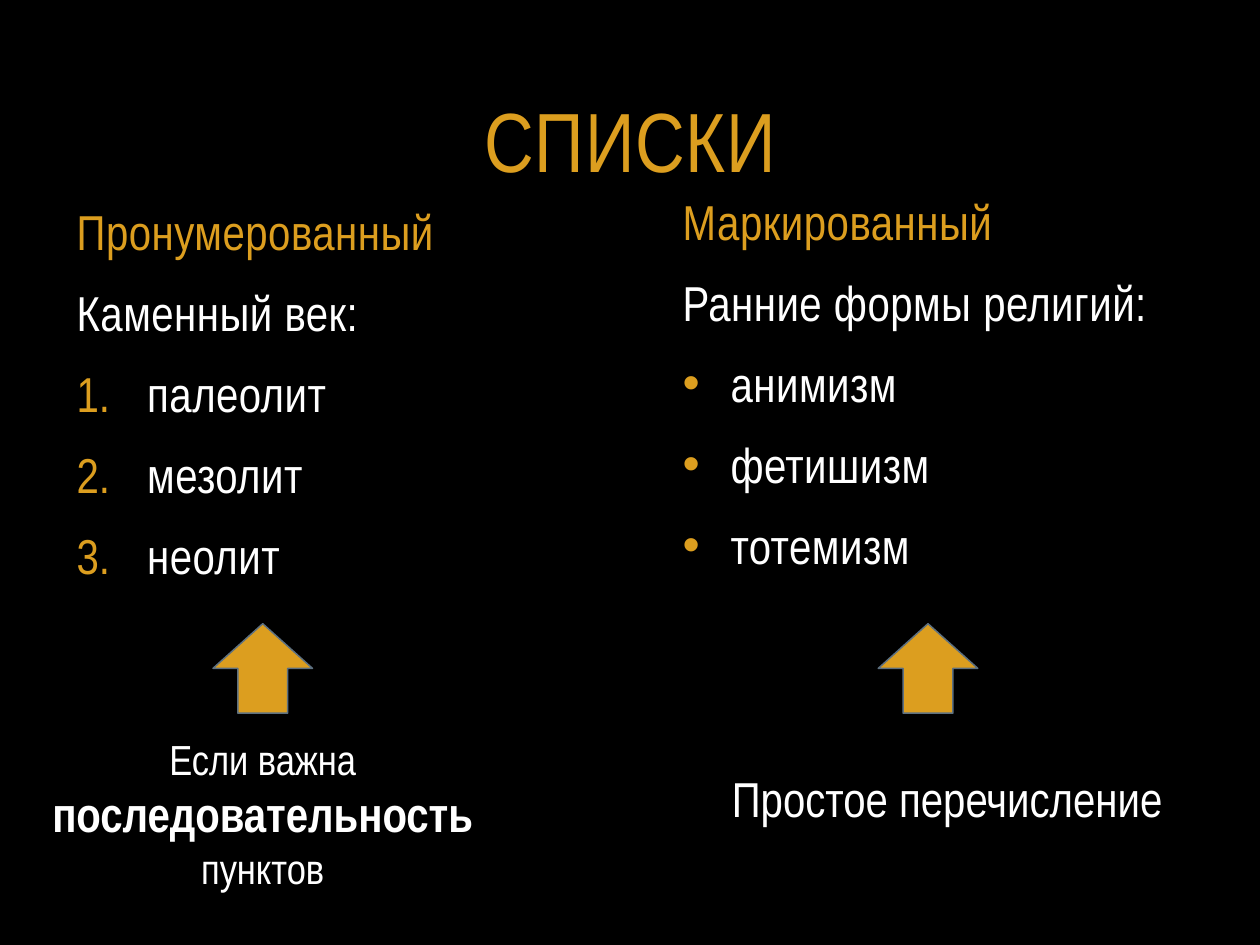
"""Build a slide that contrasts numbered and bulleted lists."""
from dataclasses import dataclass
from typing import Optional

import lxml.etree
import pptx
import pptx.dml.color
import pptx.enum.shapes
import pptx.enum.text
import pptx.oxml
import pptx.oxml.ns
import pptx.presentation
import pptx.slide
import pptx.text.text
import pptx.util
from pptx.util import Inches

GOLD, WHITE, BLACK, SLATE = "DC9E1F", "FFFFFF", "000000", "5D7080"
FONT = "Arial Narrow"
CENTER = pptx.enum.text.PP_ALIGN.CENTER


@dataclass(frozen=True)
class ListColumn:
    left: float
    top: float
    height: float
    heading: str
    lead: str
    items: tuple[str, ...]
    indent: float
    bullet_tag: str
    bullet_attributes: dict[str, str]
    arrow_left: float


COLUMNS = (
    ListColumn(0.51, 1.55, 4.5, "Пронумерованный", "Каменный век:",
               ("палеолит", "мезолит", "неолит"), 0.56,
               "a:buAutoNum", {"type": "arabicPeriod"}, 1.69),
    ListColumn(5.32, 1.47, 3.26, "Маркированный", "Ранние формы религий:",
               ("анимизм", "фетишизм", "тотемизм"), 0.38,
               "a:buChar", {"char": "•"}, 6.97),
)


def color(value: str) -> pptx.dml.color.RGBColor:
    return pptx.dml.color.RGBColor.from_string(value)


def add_box(slide: pptx.slide.Slide, left: float, top: float, width: float,
            height: float, wrap: bool = True, grow: bool = False) -> pptx.text.text.TextFrame:
    frame = slide.shapes.add_textbox(
        Inches(left), Inches(top), Inches(width), Inches(height)).text_frame
    frame.word_wrap = wrap
    if grow:
        frame.auto_size = pptx.enum.text.MSO_AUTO_SIZE.SHAPE_TO_FIT_TEXT
    return frame


def style(paragraph, fill: str, size: Optional[int] = None, spacing: float = 0) -> None:
    paragraph.font.name = FONT
    paragraph.font.color.rgb = color(fill)
    if size:
        paragraph.font.size = pptx.util.Pt(size)
    if spacing:
        for run in paragraph.runs:
            run._r.get_or_add_rPr().set("spc", str(round(spacing * 100)))


def add_bullet(paragraph, column: ListColumn) -> None:
    properties = paragraph._p.get_or_add_pPr()
    properties.set("marL", str(Inches(column.indent)))
    properties.set("indent", str(-Inches(column.indent)))
    qn = pptx.oxml.ns.qn
    bullet_color = lxml.etree.SubElement(properties, qn("a:buClr"))
    lxml.etree.SubElement(bullet_color, qn("a:srgbClr"), val=GOLD)
    lxml.etree.SubElement(properties, qn("a:buFont"), typeface=FONT if
                          column.bullet_tag == "a:buAutoNum" else "Arial")
    lxml.etree.SubElement(properties, qn(column.bullet_tag), column.bullet_attributes)


def add_list(slide: pptx.slide.Slide, column: ListColumn) -> None:
    frame = add_box(slide, column.left, column.top, 4.08, column.height)
    for index, text in enumerate((column.heading, column.lead, *column.items)):
        paragraph = frame.add_paragraph() if index else frame.paragraphs[0]
        paragraph.add_run().text = text
        if index > 1:
            add_bullet(paragraph, column)
        if index:
            paragraph.space_before = pptx.util.Pt(6.7)
        paragraph.space_after = pptx.util.Pt(6)
        style(paragraph, WHITE if index else GOLD, 28, 0.3)


def add_arrow(slide: pptx.slide.Slide, left: float) -> None:
    arrow = slide.shapes.add_shape(
        pptx.enum.shapes.MSO_SHAPE.UP_ARROW,
        Inches(left), Inches(4.95), Inches(0.79), Inches(0.71))
    arrow.shadow.inherit = False
    arrow.fill.solid()
    arrow.fill.fore_color.rgb = color(GOLD)
    arrow.line.color.rgb = color(SLATE)
    arrow.line.width = pptx.util.Pt(0.85)


def add_title(slide: pptx.slide.Slide) -> None:
    frame = add_box(slide, 0.67, 0.3, 8.67, 1.25)
    frame.vertical_anchor = pptx.enum.text.MSO_ANCHOR.BOTTOM
    title = frame.paragraphs[0]
    title.add_run().text = "СПИСКИ"
    title.alignment = CENTER
    style(title, GOLD, 48, 0.5)


def add_captions(slide: pptx.slide.Slide) -> None:
    order = add_box(slide, 0, 5.77, 4.17, 1.38, grow=True).paragraphs[0]
    order.alignment = CENTER
    for text, size, bold in (("Если важна ", 24, False),
                             ("последовательность", 28, True),
                             (" пунктов", 24, False)):
        run = order.add_run()
        run.text = text
        run.font.size = pptx.util.Pt(size)
        run.font.bold = bold
    style(order, WHITE)

    listing = add_box(slide, 5.71, 6.05, 3.67, 0.57, wrap=False, grow=True).paragraphs[0]
    listing.add_run().text = "Простое перечисление"
    style(listing, WHITE, 28)


def main() -> None:
    deck = pptx.Presentation()
    deck.slide_width, deck.slide_height = Inches(10), Inches(7.5)
    slide = deck.slides.add_slide(deck.slide_layouts[6])
    slide.background.fill.solid()
    slide.background.fill.fore_color.rgb = color(BLACK)
    for column in COLUMNS:
        add_list(slide, column)
    add_title(slide)
    for column in COLUMNS:
        add_arrow(slide, column.arrow_left)
    add_captions(slide)
    deck.save("out.pptx")


if __name__ == "__main__":
    main()
